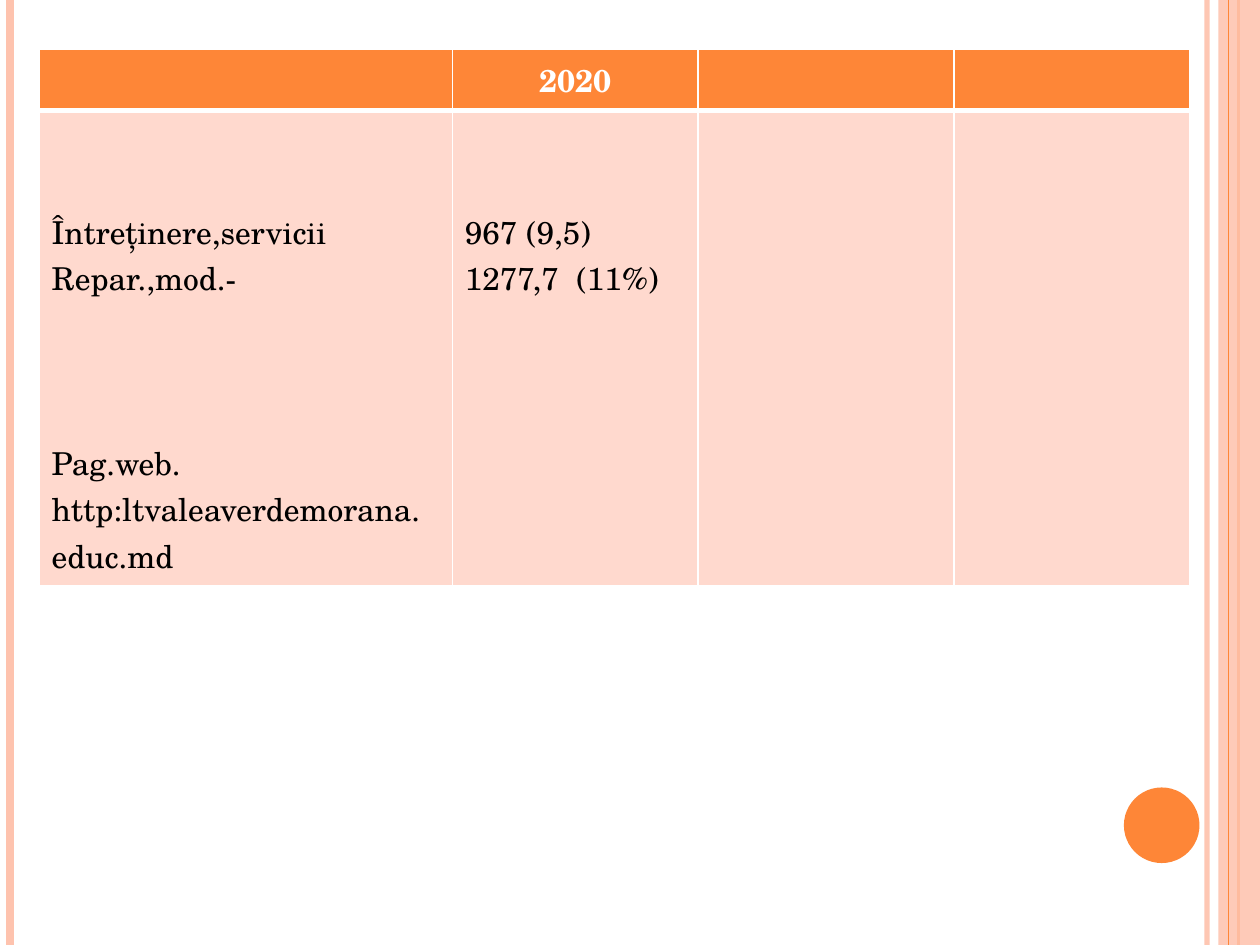
from dataclasses import dataclass

from lxml import etree
from pptx import Presentation
from pptx.dml.color import RGBColor
from pptx.enum import shapes, text
from pptx.oxml import ns
from pptx.util import Inches, Pt

ORANGE = RGBColor(0xFE, 0x86, 0x37)
PEACH = RGBColor(0xFE, 0xC3, 0xAE)
PALE = RGBColor(0xFF, 0xD9, 0xCE)
WHITE = RGBColor(0xFF, 0xFF, 0xFF)
BLACK = RGBColor(0, 0, 0)
FONT = "TeX Gyre Schola"
SIZE = 18
LINE_PITCH = 0.366  # height of one text line, inches
MARGIN = 0.05
WIDTH, HEIGHT = 10, 7.5


@dataclass
class Stripe:
    x: float
    color: RGBColor
    weight: float
    alpha: int = 100


@dataclass
class Entry:
    text: str
    lines_before: int = 0


def set_alpha(element, percent: int) -> None:
    color = element.find(".//" + ns.qn("a:srgbClr"))
    etree.SubElement(color, ns.qn("a:alpha")).set("val", str(percent * 1000))


def add_stripe(s, stripe: Stripe) -> None:
    x = Inches(stripe.x)
    line = s.shapes.add_connector(shapes.MSO_CONNECTOR.STRAIGHT, x, 0, x, Inches(HEIGHT))
    line.line.color.rgb = stripe.color
    line.line.width = Pt(stripe.weight)
    etree.SubElement(line._element.spPr, ns.qn("a:effectLst"))
    if stripe.alpha < 100:
        set_alpha(line._element.spPr, stripe.alpha)


def add_plain_shape(s, kind, x: float, y: float, w: float, h: float, color: RGBColor):
    sp = s.shapes.add_shape(kind, Inches(x), Inches(y), Inches(w), Inches(h))
    sp.shadow.inherit = False
    sp.fill.solid()
    sp.fill.fore_color.rgb = color
    sp.line.fill.background()
    return sp


def set_borders(cell, bottom: float) -> None:
    tc_pr = cell._tc.get_or_add_tcPr()
    for i, (side, weight) in enumerate((("L", 1), ("R", 1), ("T", 1), ("B", bottom))):
        ln = etree.Element(ns.qn(f"a:ln{side}"), w=str(Pt(weight)))
        fill = etree.SubElement(ln, ns.qn("a:solidFill"))
        etree.SubElement(fill, ns.qn("a:srgbClr"), val=str(WHITE))
        tc_pr.insert(i, ln)


def fill_cell(cell, entries: list[Entry], header: bool) -> None:
    cell.fill.solid()
    cell.fill.fore_color.rgb = ORANGE if header else PALE
    set_borders(cell, 3 if header else 1)
    tf = cell.text_frame
    tf.text = "\n".join(e.text for e in entries)
    for i, (p, entry) in enumerate(zip(tf.paragraphs, entries)):
        if header:
            p.alignment = text.PP_ALIGN.CENTER
        gap = entry.lines_before * LINE_PITCH
        if i == 0:
            cell.margin_top = Inches(MARGIN + gap)
        elif gap:
            p.space_before = Inches(gap)
        for r in p.runs:
            r.font.name = FONT
            r.font.size = Pt(SIZE)
            r.font.bold = header
            r.font.color.rgb = WHITE if header else BLACK


STRIPES = [
    Stripe(9.58, PEACH, 3, 93),
    Stripe(0.08, PEACH, 4.5),
    Stripe(9.83, ORANGE, 1.5),
]
EDGE_STRIPE = Stripe(9.75, ORANGE, 0.75)

COLUMNS = [3.28, 1.95, 2.03, 1.87]
ROWS = [0.47, 3.77]
CELLS = [
    [[], [Entry("2020")], [], []],
    [
        [
            Entry("Întreținere,servicii", 2),
            Entry("Repar.,mod.-"),
            Entry("Pag.web.", 3),
            Entry("http:ltvaleaverdemorana."),
            Entry("educ.md"),
        ],
        [Entry("967 (9,5)", 2), Entry("1277,7  (11%)")],
        [],
        [],
    ],
]


def main() -> None:
    prs = Presentation()
    prs.slide_width, prs.slide_height = Inches(WIDTH), Inches(HEIGHT)
    s = prs.slides.add_slide(prs.slide_layouts[6])

    # Side stripes, right band and circle
    for stripe in STRIPES:
        add_stripe(s, stripe)
    band = add_plain_shape(s, shapes.MSO_SHAPE.RECTANGLE, 9.67, 0, 0.33, HEIGHT, PEACH)
    set_alpha(band._element.spPr, 87)
    add_stripe(s, EDGE_STRIPE)
    add_plain_shape(s, shapes.MSO_SHAPE.OVAL, 8.92, 6.25, 0.6, 0.6, ORANGE)

    # Spending table
    table = s.shapes.add_table(
        len(ROWS), len(COLUMNS), Inches(0.31), Inches(0.39),
        Inches(sum(COLUMNS)), Inches(sum(ROWS)),
    ).table
    for column, width in zip(table.columns, COLUMNS):
        column.width = Inches(width)
    for i, (row, height) in enumerate(zip(table.rows, ROWS)):
        row.height = Inches(height)
        for cell, entries in zip(row.cells, CELLS[i]):
            fill_cell(cell, entries, header=i == 0)

    prs.save("out.pptx")


if __name__ == "__main__":
    main()
